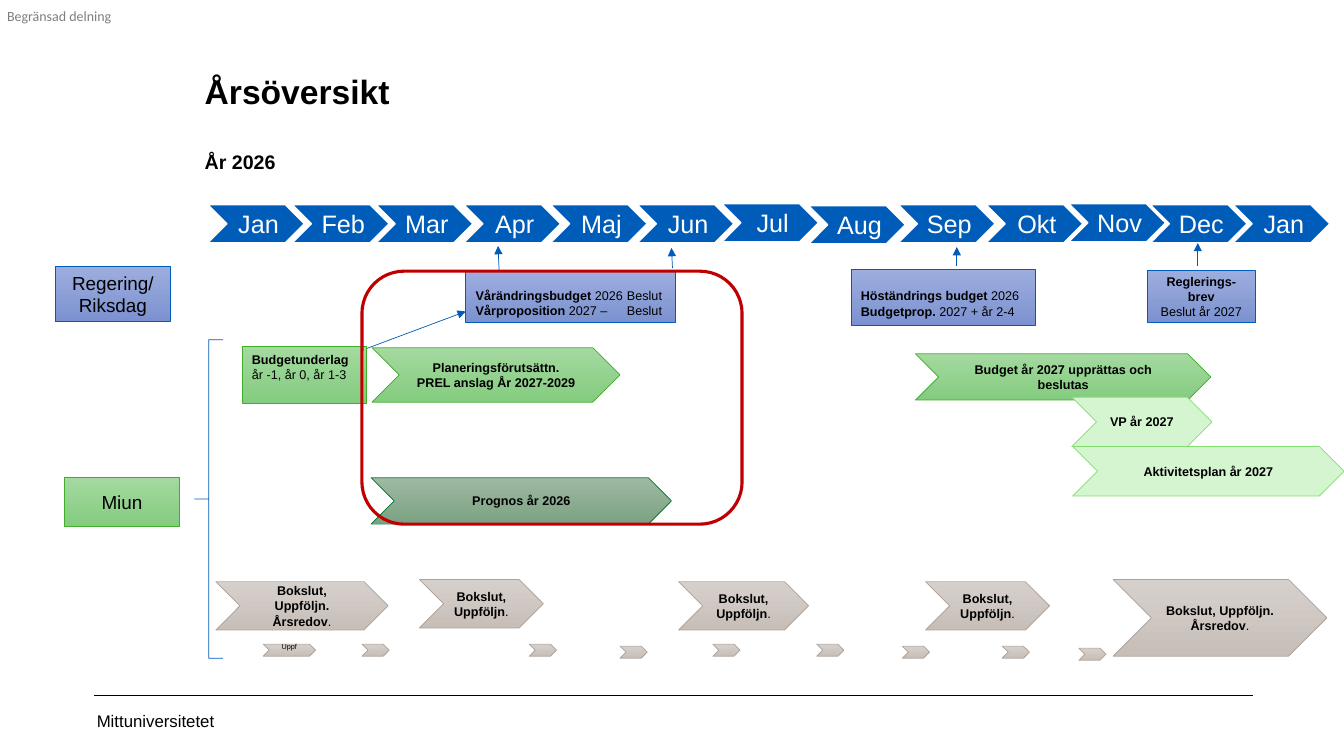
from lxml.etree import SubElement
from pptx import Presentation
from pptx.dml.color import RGBColor
from pptx.enum.shapes import MSO_CONNECTOR, MSO_SHAPE
from pptx.enum.text import MSO_ANCHOR, MSO_AUTO_SIZE, PP_ALIGN
from pptx.oxml.ns import qn
from pptx.util import Inches, Pt

COLORS = {
    "black": "000000", "white": "FFFFFF", "grey": "7F7F7F",
    "blue": "005CB9", "red": "C00000",
}
STYLES = {
    "state": (("9DADDE", "7C92D0"), "005CB9"),
    "budget": (("A4D9A0", "84CC7F"), "3FAE2A"),
    "forecast": (("9DB9A2", "7CA282"), "007934"),
    "plan": (("D5F4D0",), "82DD71"),
    "accounts": (("D6D0CC", "C7BEB8"), "AEA299"),
    "month": (("005CB9",), "FFFFFF"),
}
MARGINS = (0.1, 0.05, 0.1, 0.05)
MONTHS = [
    ("Jan", 2.06, 2.03), ("Feb", 2.9, 2.03), ("Mar", 3.73, 2.03),
    ("Apr", 4.6, 2.03), ("Maj", 5.46, 2.03), ("Jun", 6.32, 2.03),
    ("Jul", 7.16, 2.02), ("Aug", 8.02, 2.04), ("Sep", 8.91, 2.03),
    ("Okt", 9.78, 2.03), ("Nov", 10.6, 2.02), ("Dec", 11.41, 2.03),
    ("Jan", 12.23, 2.03),
]
MONTHLY_FOLLOW_UPS = [
    (3.59, 6.39), (5.25, 6.39), (6.15, 6.41), (7.07, 6.39),
    (8.1, 6.39), (8.95, 6.41), (9.94, 6.41), (10.7, 6.43),
]
FOLLOW_UP = [[("Bokslut, Uppföljn", True), (".", False)]]
ANNUAL_REPORT = [[("Bokslut, Uppföljn.", True)],
                 [("Årsredov", True), (".", False)]]


def rgb(value):
    return RGBColor.from_string(value)


def write(frame, paragraphs, size=9, color="black", font="Arial",
          align=PP_ALIGN.CENTER, anchor=MSO_ANCHOR.MIDDLE,
          margins=MARGINS, wrap=True):
    frame.word_wrap = wrap
    frame.vertical_anchor = anchor
    (frame.margin_left, frame.margin_top,
     frame.margin_right, frame.margin_bottom) = map(Inches, margins)
    for index, runs in enumerate(paragraphs):
        paragraph = frame.add_paragraph() if index else frame.paragraphs[0]
        paragraph.alignment = align
        for text, bold in runs:
            run = paragraph.add_run()
            run.text = text
            run.font.name = font
            run.font.size = Pt(size)
            run.font.bold = bold
            run.font.color.rgb = rgb(COLORS[color])


def add_label(slide, box, text, size, color, font, **layout):
    label = slide.shapes.add_textbox(*map(Inches, box))
    write(label.text_frame, [[(text, False)]], size, color, font,
          PP_ALIGN.LEFT, **layout)


def add_block(slide, preset, box, style, paragraphs=(), line_width=0.5, **layout):
    block = slide.shapes.add_shape(preset, *map(Inches, box))
    block.shadow.inherit = False
    fills, outline = STYLES[style]
    if len(fills) == 1:
        block.fill.solid()
        block.fill.fore_color.rgb = rgb(fills[0])
    else:
        block.fill.gradient()
        block.fill.gradient_angle = 270
        for stop, position, fill in zip(block.fill.gradient_stops, (0, 1), fills):
            stop.position = position
            stop.color.rgb = rgb(fill)
    block.line.color.rgb = rgb(outline)
    block.line.width = Pt(line_width)
    write(block.text_frame, paragraphs, **layout)
    return block


def add_box(slide, box, style, paragraphs, **layout):
    return add_block(slide, MSO_SHAPE.RECTANGLE, box, style, paragraphs, **layout)


def add_chevron(slide, box, style, paragraphs=(), **layout):
    return add_block(slide, MSO_SHAPE.CHEVRON, box, style, paragraphs, **layout)


def add_outline(slide, preset, box, color, width):
    outline = slide.shapes.add_shape(preset, *map(Inches, box))
    outline.shadow.inherit = False
    outline.fill.background()
    outline.line.color.rgb = rgb(COLORS[color])
    outline.line.width = Pt(width)
    return outline


def add_line(slide, ends, color, width, arrow=False):
    line = slide.shapes.add_connector(MSO_CONNECTOR.STRAIGHT, *map(Inches, ends))
    line.line.color.rgb = rgb(COLORS[color])
    line.line.width = Pt(width)
    if arrow:
        SubElement(line.line._get_or_add_ln(), qn("a:tailEnd"), type="triangle")
    SubElement(line._element.spPr, qn("a:effectLst"))


def add_tab_stop(paragraph, position):
    stops = SubElement(paragraph._p.get_or_add_pPr(), qn("a:tabLst"))
    SubElement(stops, qn("a:tab"), pos=str(Inches(position)), algn="l")


def add_title(slide):
    title = slide.shapes.title
    title.left, title.top, title.width, title.height = map(
        Inches, (1.93, 0.84, 11.3, 1.13))
    frame = title.text_frame
    frame.auto_size = MSO_AUTO_SIZE.NONE
    write(frame, [[("Årsöversikt", True)], [("År 2026", True)]], 24,
          align=PP_ALIGN.LEFT, anchor=MSO_ANCHOR.TOP)
    heading, year = frame.paragraphs
    heading.space_before = Pt(0)
    heading.line_spacing = year.line_spacing = Pt(15)
    year.space_before = Pt(30)
    year.runs[0].font.size = Pt(14)


def add_government(slide):
    add_box(slide, (8.44, 2.67, 1.83, 0.56), "state",
            [[("Höständrings budget ", True), ("2026", False)],
             [("Budgetprop. ", True), ("2027 + år 2-4", False)]],
            align=PP_ALIGN.LEFT, anchor=MSO_ANCHOR.TOP,
            margins=(0.1, 0.19, 0.1, 0.05))
    spring = add_box(slide, (4.62, 2.69, 2.08, 0.51), "state",
                     [[("Vårändringsbudget", True), (" 2026\tBeslut", False)],
                      [("Vårproposition", True), (" 2027 –\tBeslut", False)]],
                     align=PP_ALIGN.LEFT, margins=(0.1, 0.17, 0.05, 0.05))
    for paragraph in spring.text_frame.paragraphs:
        add_tab_stop(paragraph, 1.5)
    add_box(slide, (11.38, 2.68, 1.07, 0.52), "state",
            [[("Reglerings-brev", True)], [("Beslut år 2027", False)]])
    for ends in [(9.49, 2.64, 9.49, 2.45), (11.88, 2.64, 11.88, 2.41),
                 (4.95, 2.68, 4.94, 2.44), (6.67, 2.66, 6.66, 2.46),
                 (3.63, 3.46, 4.62, 3.09)]:
        add_line(slide, ends, "blue", 0.5, arrow=True)


def add_university(slide):
    add_box(slide, (2.4, 3.44, 1.23, 0.56), "budget",
            [[("Budgetunderlag ", True), ("år -1, år 0, år 1-3", False)]],
            align=PP_ALIGN.LEFT, anchor=MSO_ANCHOR.TOP)
    for box, style, lines in [
        ((9.08, 3.51, 2.93, 0.46), "budget", ["Budget år 2027 upprättas och beslutas"]),
        ((3.68, 4.74, 2.98, 0.46), "forecast", ["Prognos år 2026"]),
        ((10.63, 3.94, 1.39, 0.49), "plan", ["VP år 2027"]),
        ((3.69, 3.45, 2.46, 0.54), "budget",
         ["Planeringsförutsättn.", "PREL anslag År 2027-2029"]),
        ((10.64, 4.43, 2.69, 0.49), "plan", ["Aktivitetsplan år 2027"]),
    ]:
        add_chevron(slide, box, style, [[(line, True)] for line in lines])


def add_accounts(slide):
    for box, paragraphs in [
        ((2.14, 5.77, 1.71, 0.48), ANNUAL_REPORT),
        ((4.16, 5.75, 1.23, 0.48), FOLLOW_UP),
        ((6.73, 5.77, 1.29, 0.48), FOLLOW_UP),
        ((9.18, 5.77, 1.23, 0.48), FOLLOW_UP),
        ((11.04, 5.75, 2.12, 0.76), ANNUAL_REPORT),
    ]:
        add_chevron(slide, box, "accounts", paragraphs)
    add_chevron(slide, (2.61, 6.39, 0.52, 0.12), "accounts", [[("Uppf", False)]],
                size=5.2, margins=(0, 0, 0, 0.08), wrap=False)
    for left, top in MONTHLY_FOLLOW_UPS:
        add_chevron(slide, (left, top, 0.27, 0.12), "accounts")


def main():
    prs = Presentation()
    prs.slide_width, prs.slide_height = Inches(13.33), Inches(7.5)
    slide = prs.slides.add_slide(prs.slide_layouts[5])
    add_label(slide, (0.92, 6.95, 3, 0.4), "Mittuniversitetet", 12, "black",
              "Arial", margins=(0.04, 0.05, 0.1, 0.05))
    add_line(slide, (0.93, 6.9, 12.43, 6.9), "black", 0.25)
    add_label(slide, (0.07, 0.07, 1.07, 0.17), "Begränsad delning", 10, "grey",
              "Calibri", anchor=MSO_ANCHOR.TOP, margins=(0, 0, 0, 0), wrap=False)
    add_title(slide)
    for month, left, top in MONTHS:
        add_chevron(slide, (left, top, 0.96, 0.38), "month", [[(month, False)]],
                    line_width=1, size=18, color="white",
                    margins=(0.08, 0.03, 0.03, 0.03), wrap=False)
    add_government(slide)
    add_university(slide)
    for box, style, lines in [
        ((0.55, 2.64, 1.14, 0.55), "state", ["Regering/", "Riksdag"]),
        ((0.64, 4.74, 1.14, 0.48), "budget", ["Miun"]),
    ]:
        add_box(slide, box, style, [[(line, False)] for line in lines],
                size=13.5, margins=(0.07, 0.04, 0.07, 0.04))
    add_accounts(slide)
    brace = add_outline(slide, MSO_SHAPE.LEFT_BRACE, (1.93, 3.37, 0.28, 3.16),
                        "blue", 0.5)
    brace.adjustments[0] = 0
    add_outline(slide, MSO_SHAPE.ROUNDED_RECTANGLE, (3.59, 2.69, 3.77, 2.51),
                "red", 2.25)
    prs.save("out.pptx")


if __name__ == "__main__":
    main()
